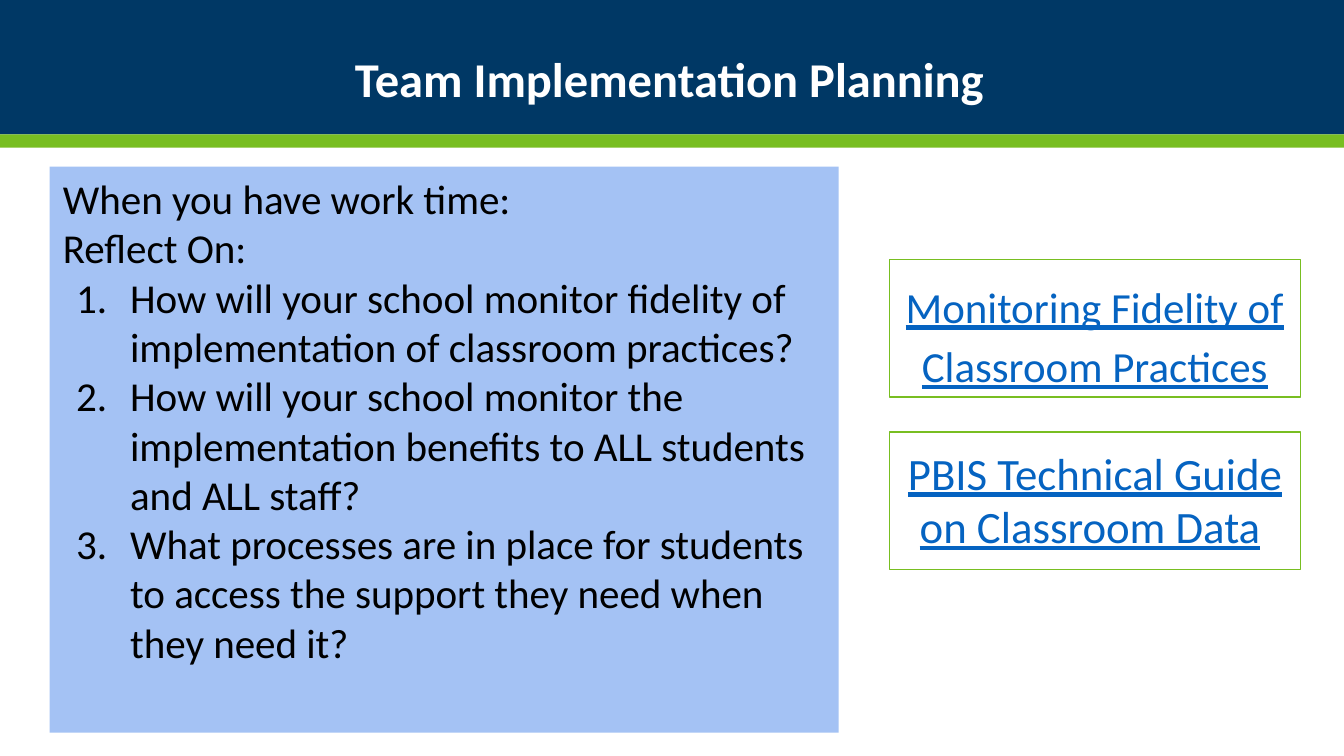
import pptx
import pptx.dml.color
import pptx.enum.shapes
import pptx.enum.text
import pptx.oxml
import pptx.oxml.ns
import pptx.util
from pptx.util import Cm

NAVY, GREEN, PALE_BLUE = "003865", "78BE21", "A4C2F4"
WHITE, BLACK, LINK_BLUE = "FFFFFF", "000000", "0563C1"
ALIGN = pptx.enum.text.PP_ALIGN
ANCHOR = pptx.enum.text.MSO_ANCHOR

INTRODUCTION = ["When you have work time:", "Reflect On:"]
QUESTIONS = [
    "How will your school monitor fidelity of implementation of classroom practices?",
    "How will your school monitor the implementation benefits to ALL students and ALL staff?",
    "What processes are in place for students to access the support they need when they need it?",
]


def color(value):
    return pptx.dml.color.RGBColor.from_string(value)


def add_rectangle(slide, box, fill=None, line=None):
    shape = slide.shapes.add_shape(
        pptx.enum.shapes.MSO_SHAPE.RECTANGLE, *[Cm(length) for length in box])
    shape.shadow.inherit = False
    if fill:
        shape.fill.solid()
        shape.fill.fore_color.rgb = color(fill)
    else:
        shape.fill.background()
    if line:
        shape.line.color.rgb = color(line)
        shape.line.width = pptx.util.Pt(0.75)
    else:
        shape.line.fill.background()
    return shape


def set_frame(frame, horizontal, vertical, anchor=ANCHOR.TOP):
    frame.word_wrap = True
    frame.vertical_anchor = anchor
    frame.margin_left = frame.margin_right = Cm(horizontal)
    frame.margin_top = frame.margin_bottom = Cm(vertical)


def add_run(paragraph, text, size, ink, bold=False, underline=False):
    run = paragraph.add_run()
    run.text = text
    run.font.name = "Calibri"
    run.font.size = pptx.util.Pt(size)
    run.font.color.rgb = color(ink)
    run.font.bold = bold
    run.font.underline = underline


def number_paragraph(paragraph):
    properties = paragraph._p.get_or_add_pPr()
    properties.set("marL", str(Cm(1.27)))
    properties.set("indent", str(Cm(-1.02)))
    namespace = pptx.oxml.ns.nsdecls("a")
    properties.append(pptx.oxml.parse_xml(
        f'<a:buClr {namespace}><a:srgbClr val="{BLACK}"/></a:buClr>'))
    properties.append(pptx.oxml.parse_xml(
        f'<a:buAutoNum {namespace} type="arabicPeriod"/>'))


def add_header(slide, box):
    left, top, width, height = box
    stripe = 0.25
    add_rectangle(slide, (left, top, width, height - stripe), NAVY)
    add_rectangle(slide, (left, top + height - stripe, width, stripe), GREEN)
    title = slide.shapes.add_textbox(
        Cm(left + 6.53), Cm(top + 0.89), Cm(width - 6.53), Cm(1.3))
    set_frame(title.text_frame, 0.18, 0.1, ANCHOR.MIDDLE)
    paragraph = title.text_frame.paragraphs[0]
    paragraph.line_spacing = 0.9
    add_run(paragraph, "Team Implementation Planning", 26, WHITE, bold=True)


def add_reflection_panel(slide, box):
    frame = add_rectangle(slide, box, PALE_BLUE).text_frame
    set_frame(frame, 0.25, 0.13)
    for index, text in enumerate(INTRODUCTION + QUESTIONS):
        paragraph = frame.add_paragraph() if index else frame.paragraphs[0]
        paragraph.alignment = ALIGN.LEFT
        if text in QUESTIONS:
            number_paragraph(paragraph)
        add_run(paragraph, text, 22, BLACK)


def add_resource(slide, box, text, size, spacing, fill=None, ending=None):
    frame = add_rectangle(slide, box, fill, GREEN).text_frame
    set_frame(frame, 0.25, 0.25)
    paragraph = frame.paragraphs[0]
    paragraph.alignment = ALIGN.CENTER
    paragraph.line_spacing = spacing
    add_run(paragraph, text, size, LINK_BLUE, underline=True)
    if ending:
        add_run(paragraph, ending, size, NAVY)


def add_resources(slide, box):
    left, top, width, height = box
    card = 2.6
    add_resource(slide, (left, top, width, card),
                 "Monitoring Fidelity of Classroom Practices", 23, 1.15, fill=WHITE)
    add_resource(slide, (left, top + height - card, width, card),
                 "PBIS Technical Guide on Classroom Data", 24, 1.0, ending=" ")


def main():
    presentation = pptx.Presentation()
    presentation.slide_width = Cm(25.4)
    presentation.slide_height = Cm(14.28)
    slide = presentation.slides.add_slide(presentation.slide_layouts[6])
    add_header(slide, (0, 0, 25.4, 2.79))
    add_reflection_panel(slide, (0.94, 3.15, 14.91, 10.69))
    add_resources(slide, (16.81, 4.9, 7.77, 5.86))
    presentation.save("out.pptx")


if __name__ == "__main__":
    main()
